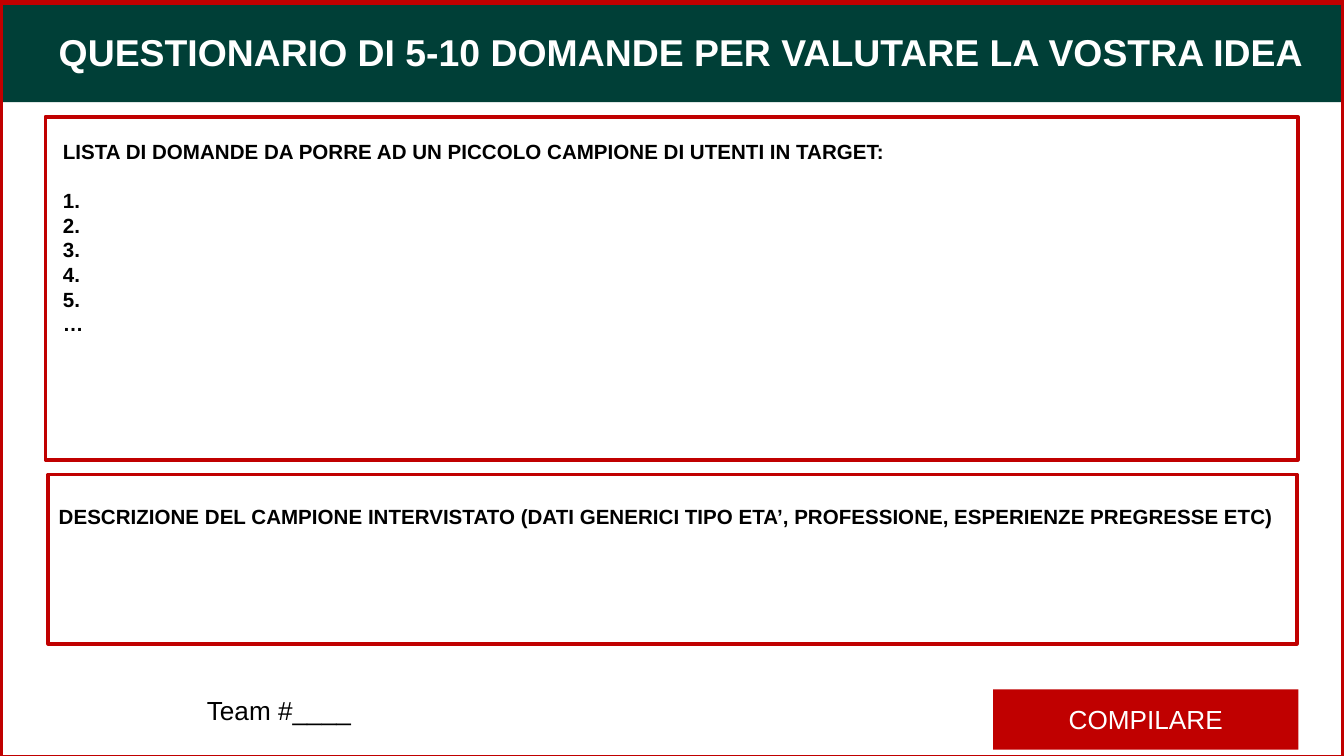
from lxml import etree
from pptx import Presentation
from pptx import util as u
from pptx.dml.color import RGBColor
from pptx.enum import shapes, text
from pptx.oxml.ns import qn

GREEN, RED, WHITE, BLACK = "003F37", "C00000", "FFFFFF", "000000"


def colour(value):
    return RGBColor.from_string(value)


def write(box, lines, size=11, color=BLACK, bold=False, align=text.PP_ALIGN.LEFT,
          anchor=text.MSO_ANCHOR.TOP, inset=0.13, grow=False, heading_gap=0):
    """Fill a box with paragraphs; heading_gap is the space after the first one."""
    frame = box.text_frame
    frame.word_wrap = True
    frame.auto_size = (text.MSO_AUTO_SIZE.SHAPE_TO_FIT_TEXT if grow
                       else text.MSO_AUTO_SIZE.NONE)
    frame.vertical_anchor = anchor
    frame.margin_left = frame.margin_right = u.Cm(0.25)
    frame.margin_top = frame.margin_bottom = u.Cm(inset)
    for index, line in enumerate(lines):
        para = frame.paragraphs[0] if index == 0 else frame.add_paragraph()
        properties = para._p.get_or_add_pPr()
        properties.set("marL", "0")
        properties.set("indent", "0")
        etree.SubElement(properties, qn("a:buNone"))
        para.alignment = align
        para.space_before = u.Pt(heading_gap if index == 1 else 0)
        span = para.add_run()
        span.text = line
        span.font.name = "Arial"
        span.font.size = u.Pt(size)
        span.font.bold = bold
        span.font.color.rgb = colour(color)


class Sheet:
    """Holds the style and the current slide."""

    def __init__(self, deck):
        self.page = deck.slides.add_slide(deck.slide_layouts[1])

    def rectangle(self, *place, fill=None, line=None, width=2):
        box = self.page.shapes.add_shape(shapes.MSO_SHAPE.RECTANGLE, *map(u.Cm, place))
        box.shadow.inherit = False
        if fill:
            box.fill.solid()
            box.fill.fore_color.rgb = colour(fill)
        else:
            box.fill.background()
        if line:
            box.line.color.rgb = colour(line)
            box.line.width = u.Pt(width)
        else:
            box.line.fill.background()
        return box

    def label(self, lines, *place, **style):
        box = self.page.shapes.add_textbox(*map(u.Cm, place))
        write(box, lines, **style)

    def placeholder(self, index, lines, *place, **style):
        box = self.page.placeholders[index]
        box.left, box.top, box.width, box.height = map(u.Cm, place)
        self.page.shapes._spTree.append(box._element)  # bring to front
        write(box, lines, **style)


def main():
    deck = Presentation()
    deck.slide_width, deck.slide_height = u.Cm(25.4), u.Cm(14.29)
    sheet = Sheet(deck)
    middle = text.MSO_ANCHOR.MIDDLE

    # Banner, title and page border
    sheet.rectangle(0, 0, 25.4, 1.93, fill=GREEN)
    sheet.placeholder(0, ["QUESTIONARIO DI 5-10 DOMANDE PER VALUTARE LA VOSTRA IDEA"],
                      0.86, 0.18, 24.33, 1.6, size=20, color=WHITE, bold=True,
                      anchor=middle, inset=0.25)
    sheet.rectangle(0, 0.05, 25.4, 14.27, line=RED, width=3)

    # Question list
    sheet.rectangle(0.86, 2.21, 23.67, 6.48, line=RED)
    questions = ["LISTA DI DOMANDE DA PORRE AD UN PICCOLO CAMPIONE DI UTENTI IN TARGET:"]
    questions += [f"{number}." for number in range(1, 6)] + ["…"]
    sheet.placeholder(1, questions, 0.94, 2.49, 16.31, 4.01, bold=True, grow=True,
                      heading_gap=13.2)

    # Sample description
    sheet.rectangle(0.91, 8.97, 23.6, 3.2, line=RED)
    sheet.label(["DESCRIZIONE DEL CAMPIONE INTERVISTATO (DATI GENERICI TIPO ETA’, "
                 "PROFESSIONE, ESPERIENZE PREGRESSE ETC)"],
                0.86, 9.4, 23.93, 0.74, bold=True, grow=True)

    # Footer
    button = sheet.rectangle(18.77, 13.03, 5.77, 1.14, fill=RED)
    write(button, ["COMPILARE"], size=14, color=WHITE, anchor=middle,
          align=text.PP_ALIGN.CENTER)
    sheet.label(["Team #____"], 3.66, 12.85, 5.77, 1.14, size=14, anchor=middle)

    deck.save("out.pptx")


if __name__ == "__main__":
    main()
